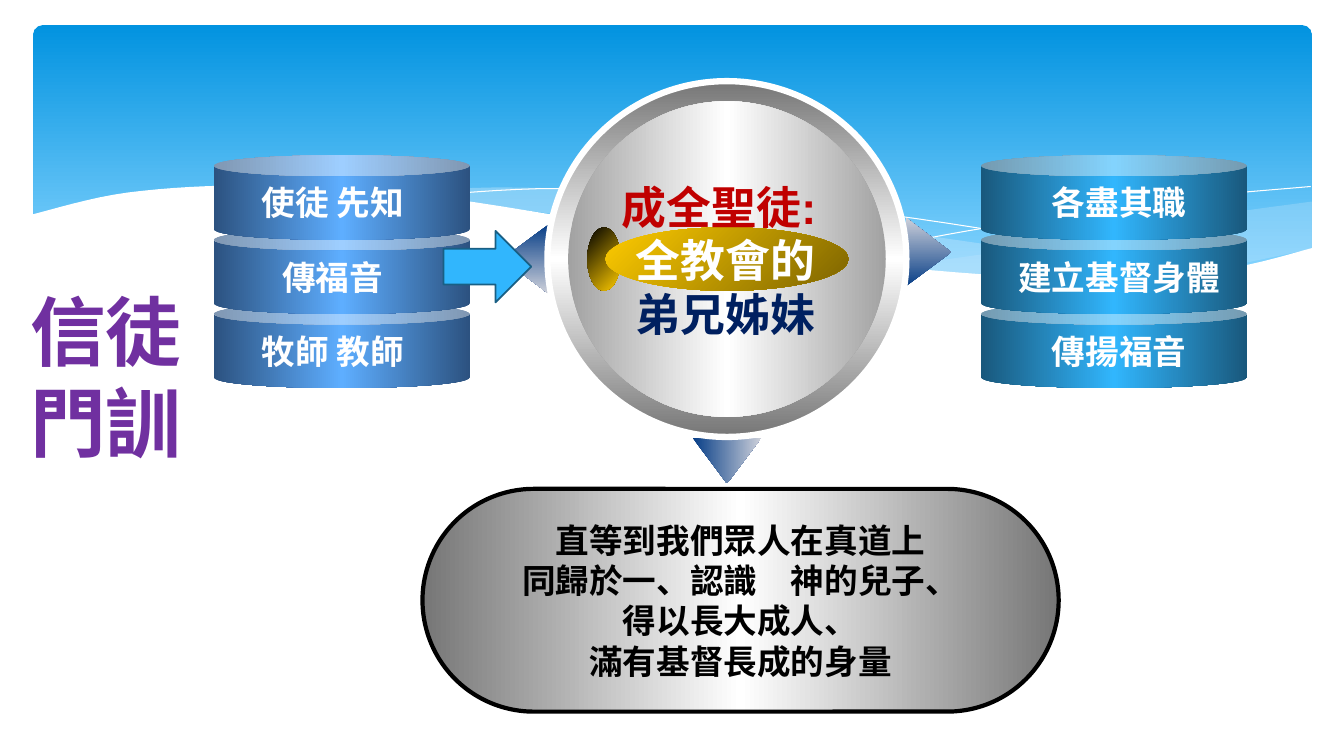
from lxml.etree import SubElement
from pptx import Presentation
from pptx.dml.color import RGBColor
from pptx.enum.shapes import MSO_SHAPE
from pptx.enum.text import MSO_ANCHOR, PP_ALIGN
from pptx.oxml.ns import qn
from pptx.util import Inches, Pt

WHITE = "FFFFFF"
BLACK = "000000"
SKY = "31B6FD"
PALE_SKY = "C6E7FC"

HUB_X, HUB_Y = 7.21, 2.57
ROW_PITCH = 0.735
CAN_TOP, CAN_HEIGHT = 1.54, 0.84
LABEL_TOP, LABEL_WIDTH, LABEL_HEIGHT = 1.76, 2.6, 0.56
STEPS_PER_KNOT = 8


def color(value):
    return RGBColor.from_string(value)


def mirrored(edge, middle):
    return [(0, edge), (50, middle), (100, edge)]


def centered(center_x, center_y, width, height):
    return center_x - width / 2, center_y - height / 2, width, height


def spline(before, start, end, after, t):
    return (start + (end - before) * t / 2
            + (2 * before - 5 * start + 4 * end - after) * t ** 2 / 2
            + (3 * start - before - 3 * end + after) * t ** 3 / 2)


def smooth_curve(knots):
    padded = [knots[0], *knots, knots[-1]]
    points = [knots[0]]
    for window in zip(padded, padded[1:], padded[2:], padded[3:]):
        for step in range(1, STEPS_PER_KNOT + 1):
            t = step / STEPS_PER_KNOT
            points.append(tuple(spline(*axis, t) for axis in zip(*window)))
    return points


def set_fill(shape, fill, angle=0):
    if fill is None:
        shape.fill.background()
    elif isinstance(fill, str):
        shape.fill.solid()
        shape.fill.fore_color.rgb = color(fill)
    else:
        shape.fill.gradient()
        shape.fill.gradient_angle = -angle % 360
        stop_list = shape._element.spPr.find(qn("a:gradFill")).find(qn("a:gsLst"))
        stop_list.clear()
        for position, value in fill:
            stop = SubElement(stop_list, qn("a:gs"), pos=str(position * 1000))
            SubElement(stop, qn("a:srgbClr"), val=value)


def set_alpha(shape, percent):
    fill_color = shape._element.spPr.find(qn("a:solidFill"))[0]
    SubElement(fill_color, qn("a:alpha"), val=str(percent * 1000))


def set_line(shape, line):
    if line is None:
        shape.line.fill.background()
    else:
        line_color, width = line
        shape.line.color.rgb = color(line_color)
        shape.line.width = Pt(width)


def add_figure(slide, kind, box, fill, angle=0, line=None, adjustments=()):
    shape = slide.shapes.add_shape(kind, *map(Inches, box))
    shape.shadow.inherit = False
    for index, value in enumerate(adjustments):
        shape.adjustments[index] = value
    set_fill(shape, fill, angle)
    set_line(shape, line)
    return shape


def add_outline(slide, points, fill=None, line=None):
    start, *rest = [(Inches(x), Inches(y)) for x, y in points]
    builder = slide.shapes.build_freeform(*start)
    builder.add_line_segments(rest, close=fill is not None)
    shape = builder.convert_to_shape()
    shape.shadow.inherit = False
    set_fill(shape, fill)
    set_line(shape, line)
    return shape


def write_text(shape, lines, size, font="Arial", anchor=MSO_ANCHOR.TOP, wrap=True):
    frame = shape.text_frame
    frame.word_wrap = wrap
    frame.vertical_anchor = anchor
    for index, (text, value) in enumerate(lines):
        paragraph = frame.add_paragraph() if index else frame.paragraphs[0]
        paragraph.alignment = PP_ALIGN.CENTER
        run = paragraph.add_run()
        run.text = text
        run.font.size = Pt(size)
        run.font.name = font
        run.font.bold = True
        run.font.color.rgb = color(value)


def add_text(slide, box, lines, size, **options):
    write_text(slide.shapes.add_textbox(*map(Inches, box)), lines, size, **options)


def add_glow(slide, upper_knots, lower_knots, alpha):
    outline = smooth_curve(upper_knots) + smooth_curve(lower_knots)
    set_alpha(add_outline(slide, outline, PALE_SKY), alpha)


def add_backdrop(slide):
    left, right, bottom = 0.31, 13.02, 3.29
    add_figure(slide, MSO_SHAPE.ROUNDED_RECTANGLE, (0.33, 0.25, 12.68, 2.7),
               [(0, "0293E0"), (90, "83D3FE")], 90, adjustments=(0.034,))

    add_glow(slide, [(13.01, 2), (11.88, 2.16), (10.38, 2.43), (8.82, 2.65)],
             [(8.82, 2.65), (10.09, 2.76), (11.5, 2.75), (13.01, 2.47)], 29)
    add_glow(slide, [(3.82, 1.91), (5.06, 1.86), (6.52, 1.94), (8.38, 2.22), (11.9, 2.73)],
             [(11.9, 2.73), (10.61, 2.79), (9.07, 2.68), (5.39, 2.11), (3.82, 1.91)], 40)

    falling_line = [(4.12, 1.95), (5.55, 1.87), (7.42, 1.97), (9.69, 2.26), (12.1, 2.72)]
    rising_line = [(8.18, 2.57), (9.6, 2.29), (11.55, 1.99), (13, 1.85)]
    for knots in (falling_line, rising_line):
        add_outline(slide, smooth_curve(knots), line=(WHITE, 0))

    wave_crest = [(left, 2.13), (1.27, 1.91), (2.58, 1.84), (4.21, 1.94), (6.34, 2.27),
                  (8.63, 2.62), (10.78, 2.77), (12.13, 2.67), (right, 2.46)]
    add_outline(slide, smooth_curve(wave_crest) + [(right, bottom), (left, bottom)], WHITE)


def add_pointer(slide, center_x, center_y, rotation):
    pointer = add_figure(slide, MSO_SHAPE.UP_ARROW, centered(center_x, center_y, 0.68, 0.45),
                         [(0, "073E87"), (100, "CDD0DA")], adjustments=(0.517, 1))
    pointer.rotation = rotation
    pointer._element.spPr.xfrm.set("flipH", "1")


def add_hub(slide):
    add_pointer(slide, HUB_X - 2, HUB_Y, 270)
    add_pointer(slide, HUB_X + 2, HUB_Y - 0.07, 90)
    add_pointer(slide, HUB_X, HUB_Y + 2, 180)

    rim = centered(HUB_X, HUB_Y, 3.56, 3.53)
    face = centered(HUB_X, HUB_Y, 3.15, 3.13)
    badge_end = centered(HUB_X - 1.22, HUB_Y, 0.33, 0.63)
    badge = centered(HUB_X, HUB_Y, 2.41, 0.63)
    add_figure(slide, MSO_SHAPE.OVAL, rim, mirrored("767676", WHITE), 90, (WHITE, 4.5))
    add_figure(slide, MSO_SHAPE.OVAL, face, mirrored("A2A2A2", WHITE))
    add_figure(slide, MSO_SHAPE.OVAL, badge_end, [(0, BLACK), (100, "FFCC00")], 45)
    add_figure(slide, MSO_SHAPE.OVAL, badge, [(0, "FFCC00"), (100, "7C6300")], 45)
    add_text(slide, (5.91, 1.73, 2.57, 1.72),
             [("成全聖徒: ", "C00000"), ("全教會的", WHITE), ("弟兄姊妹", "002060")], 32)


def add_stack(slide, left, width, gradient, label_center, labels):
    for row in reversed(range(len(labels))):
        add_figure(slide, MSO_SHAPE.CAN, (left, CAN_TOP + ROW_PITCH * row, width, CAN_HEIGHT),
                   gradient, adjustments=(0.25,))
    for row, label in enumerate(labels):
        box = (label_center - LABEL_WIDTH / 2, LABEL_TOP + ROW_PITCH * row,
               LABEL_WIDTH, LABEL_HEIGHT)
        add_text(slide, box, [(label, WHITE)], 24, wrap=False)


def add_goal(slide):
    goal = add_figure(slide, MSO_SHAPE.ROUNDED_RECTANGLE, (4.19, 4.85, 6.31, 2.21),
                      mirrored("767676", WHITE), line=(BLACK, 3), adjustments=(0.5,))
    lines = ("直等到我們眾人在真道上", "同歸於一、認識　神的兒子、",
             "得以長大成人、", "滿有基督長成的身量")
    write_text(goal, [(line, BLACK) for line in lines], 24,
               anchor=MSO_ANCHOR.MIDDLE, wrap=False)


def main():
    presentation = Presentation()
    presentation.slide_width = Inches(13.33)
    presentation.slide_height = Inches(7.5)
    slide = presentation.slides.add_slide(presentation.slide_layouts[6])
    add_backdrop(slide)
    add_hub(slide)
    add_stack(slide, 2.12, 2.54, mirrored("2C5280", "5EAEFF"), 3.3,
              ("使徒 先知", "傳福音", "牧師 教師"))
    add_stack(slide, 9.73, 2.64, mirrored("19587C", SKY), 11.1,
              ("各盡其職", "建立基督身體", "傳揚福音"))
    add_goal(slide)
    add_figure(slide, MSO_SHAPE.RIGHT_ARROW, (4.4, 2.29, 0.87, 0.71), SKY,
               line=("195F84", 1.25))
    add_text(slide, (0.08, 0.3, 1.94, 6.86), [("信徒門訓", "7030A0")], 54,
             font="Calibri", anchor=MSO_ANCHOR.MIDDLE)
    presentation.save("out.pptx")


if __name__ == "__main__":
    main()
